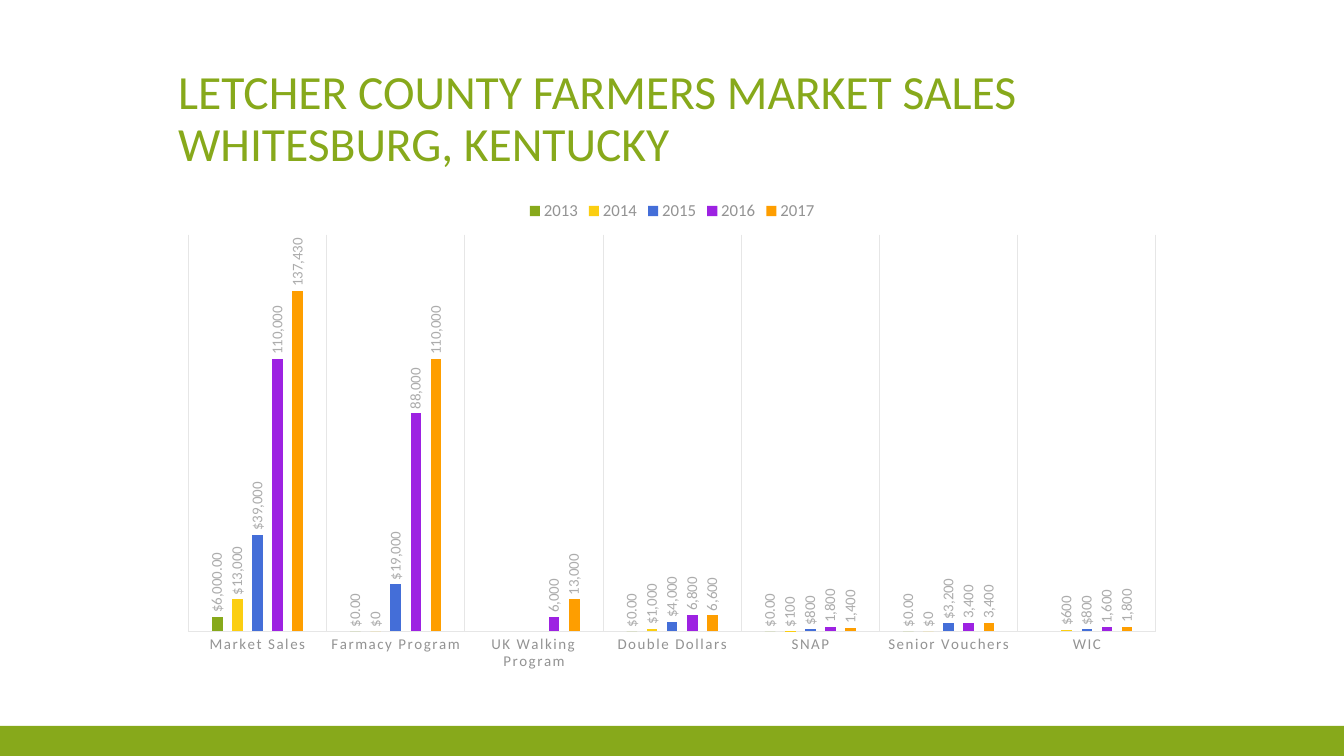
from dataclasses import dataclass

from pptx import Presentation
from pptx.chart.data import CategoryChartData
from pptx.dml.color import RGBColor
from pptx.enum.chart import XL_CHART_TYPE as ChartType
from pptx.enum.chart import XL_LABEL_POSITION as LabelPosition
from pptx.enum.chart import XL_LEGEND_POSITION as LegendPosition
from pptx.enum.chart import XL_TICK_MARK as TickMark
from pptx.enum.shapes import MSO_SHAPE as ShapeKind
from pptx.enum.text import MSO_ANCHOR as Anchor
from pptx.util import Cm, Pt

DOLLARS = '"$"#,##0_);[Red]\\("$"#,##0\\)'
DOLLARS_CENTS = '"$"#,##0.00_);[Red]\\("$"#,##0.00\\)'
PLAIN = "#,##0"

CATEGORIES = ["Market Sales", "Farmacy Program", "UK Walking Program", "Double Dollars",
              "SNAP", "Senior Vouchers", "WIC"]
# Year, colour, label format, sales by category
SALES = [
    ("2013", "87A91B", DOLLARS_CENTS, [6000, 0, None, 0, 0, 0, None]),
    ("2014", "FBCE11", DOLLARS, [13000, 0, None, 1000, 100, 0, 600]),
    ("2015", "446ED8", DOLLARS, [39000, 19000, None, 4000, 800, 3200, 800]),
    ("2016", "9D22E2", PLAIN, [110000, 88000, 6000, 6800, 1800, 3400, 1600]),
    ("2017", "FE9E00", PLAIN, [137430, 110000, 13000, 6600, 1400, 3400, 1800]),
]


@dataclass(frozen=True)
class Theme:
    font: str = "Calibri"
    accent: str = "87A91B"
    chart_text: str = "595959"
    axis_text: str = "939393"
    label_text: str = "ACACAC"
    grid: str = "E6E6E6"
    title_size: float = 34
    chart_size: float = 10
    legend_size: float = 11.97
    label_size: float = 10.64


def apply(target, values):
    for name, value in values.items():
        setattr(target, name, value)


def apply_xml(elements, values):
    for element in elements:
        for name, value in values.items():
            element.set(name, value)


class SlideBuilder:
    def __init__(self, slide, theme):
        self.slide = slide
        self.theme = theme

    def style_font(self, font, size, color):
        apply(font, {"name": self.theme.font, "size": Pt(size), "bold": False})
        font.color.rgb = RGBColor.from_string(color)

    def style_line(self, line):
        line.color.rgb = RGBColor.from_string(self.theme.grid)
        line.width = Pt(0.75)

    def add_band(self, *box):
        band = self.slide.shapes.add_shape(ShapeKind.RECTANGLE, *map(Cm, box))
        band.shadow.inherit = False
        band.fill.solid()
        band.fill.fore_color.rgb = RGBColor.from_string(self.theme.accent)
        band.line.fill.background()

    def add_title(self, text, *box):
        frame = self.slide.shapes.add_textbox(*map(Cm, box)).text_frame
        apply(frame, {"word_wrap": True, "vertical_anchor": Anchor.BOTTOM})
        paragraph = frame.paragraphs[0]
        paragraph.text = text
        paragraph.line_spacing = 0.9
        for run in paragraph.runs:
            self.style_font(run.font, self.theme.title_size, self.theme.accent)

    def add_column_chart(self, categories, sales, *box):
        theme = self.theme
        data = CategoryChartData()
        data.categories = categories
        for year, _, number_format, values in sales:
            data.add_series(year, values, number_format)
        chart = self.slide.shapes.add_chart(
            ChartType.COLUMN_CLUSTERED, *map(Cm, box), data).chart
        self.style_font(chart.font, theme.chart_size, theme.chart_text)
        apply(chart, {"has_title": False, "has_legend": True})
        apply(chart.legend, {"position": LegendPosition.TOP, "include_in_layout": False})
        self.style_font(chart.legend.font, theme.legend_size, theme.axis_text)
        plot = chart.plots[0]
        apply(plot, {"gap_width": 444, "overlap": -90, "vary_by_categories": False})
        self.style_axes(chart)
        for series, (_, color, number_format, _) in zip(plot.series, sales):
            self.style_series(series, color, number_format)
        apply_xml(chart._chartSpace.xpath(".//a:defRPr"), {"kern": "1200"})

    def style_axes(self, chart):
        apply(chart.value_axis, {"visible": False, "has_major_gridlines": False,
                                 "minimum_scale": 0, "maximum_scale": 160000})
        axis = chart.category_axis
        apply(axis, {"has_major_gridlines": True, "major_tick_mark": TickMark.NONE,
                     "minor_tick_mark": TickMark.NONE})
        self.style_line(axis.format.line)
        self.style_line(axis.major_gridlines.format.line)
        self.style_font(axis.tick_labels.font, self.theme.label_size, self.theme.axis_text)
        apply_xml(axis._element.xpath("c:txPr//a:defRPr"), {"spc": "120"})

    def style_series(self, series, color, number_format):
        """Colour one year's columns and turn their value labels upright."""
        series.format.fill.solid()
        series.format.fill.fore_color.rgb = RGBColor.from_string(color)
        series.invert_if_negative = False
        labels = series.data_labels
        apply(labels, {"show_value": True, "position": LabelPosition.OUTSIDE_END,
                       "number_format": number_format, "number_format_is_linked": False})
        self.style_font(labels.font, self.theme.label_size, self.theme.label_text)
        apply_xml(series._element.xpath("c:dLbls/c:txPr/a:bodyPr"),
                  {"rot": "-5400000", "vert": "horz"})


def main():
    presentation = Presentation()
    apply(presentation, {"slide_width": Cm(33.87), "slide_height": Cm(19.05)})
    slide = presentation.slides.add_slide(presentation.slide_layouts[6])
    builder = SlideBuilder(slide, Theme())
    builder.add_band(0, 18.29, 33.87, 0.76)
    builder.add_title("LETCHER COUNTY FARMERS MARKET SALES\vWHITESBURG, KENTUCKY",
                      4.24, 1.27, 25.4, 3.18)
    builder.add_column_chart(CATEGORIES, SALES, 4.24, 4.78, 25.4, 12.38)
    presentation.save("out.pptx")


if __name__ == "__main__":
    main()
